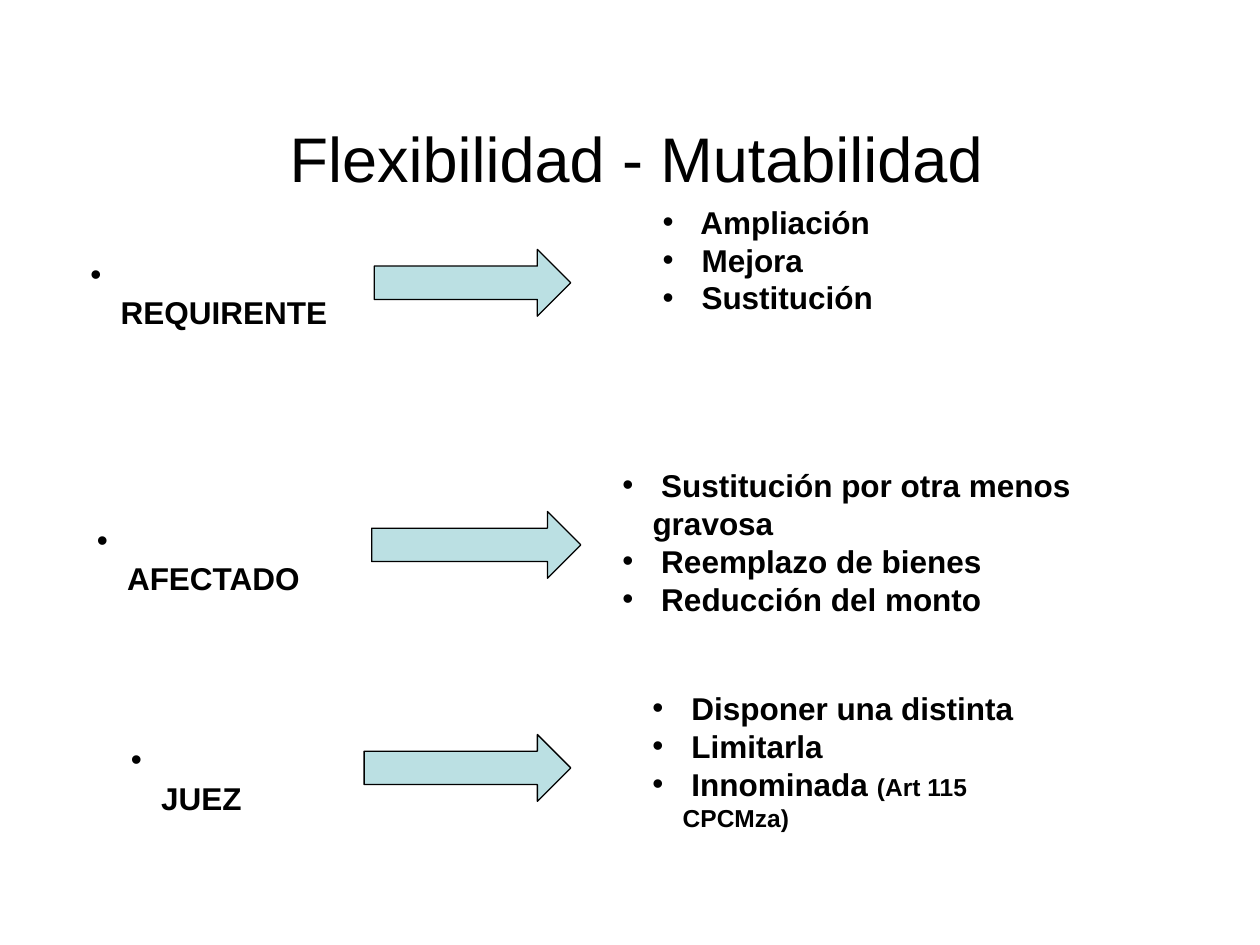
from dataclasses import dataclass

from lxml import etree
from pptx import Presentation
from pptx import util as u
from pptx.dml.color import RGBColor
from pptx.enum import shapes, text
from pptx.oxml import ns


@dataclass(frozen=True)
class Theme:
    font: str = "Arial"
    ink: RGBColor = RGBColor(0, 0, 0)
    fill: RGBColor = RGBColor(0xBB, 0xE0, 0xE3)
    head: int = 36
    body: int = 18
    note: int = 14
    line: float = 0.75
    hang: float = 0.24


THEME = Theme()
WIDE, HIGH = u.Inches(10), u.Inches(7.5)
COLS, ROWS = 100, 75  # ten grid cells to the inch

# Each row: label and its box, arrow box, list and its box (column, row, columns, rows)
PARTS = [
    ("REQUIRENTE", (6.2, 19.8, 21.3, 4), (29.7, 19.8, 15.6, 5.3),
     [[" Ampliación"], [" Mejora"], [" Sustitución"]],
     (51.6, 15.6, 18.9, 10.1)),
    ("AFECTADO", (6.7, 40.9, 18.6, 4), (29.5, 40.6, 16.6, 5.3),
     [[" Sustitución por otra menos gravosa"], [" Reemplazo de bienes"],
      [" Reducción del monto"]],
     (48.4, 36.5, 46.8, 10.1)),
    ("JUEZ", (9.4, 58.3, 11.4, 4), (28.9, 58.3, 16.4, 5.3),
     [[" Disponer una distinta"], [" Limitarla"],
      [" Innominada ", "(Art 115 CPCMza)"]],
     (50.8, 54.2, 34.7, 10.1)),
]


def place(box):
    """Turn grid cells into slide lengths."""
    x, y, w, h = box
    return (int(WIDE * x / COLS), int(HIGH * y / ROWS),
            int(WIDE * w / COLS), int(HIGH * h / ROWS))


def frame(slide, box):
    body = slide.shapes.add_textbox(*place(box)).text_frame
    body.word_wrap = True
    return body


def style(para, size, bold=False):
    font = para.font
    font.name, font.size, font.bold = THEME.font, u.Pt(size), bold
    font.color.rgb = THEME.ink


def bullet(para):
    props = para._p.get_or_add_pPr()
    hang = u.Inches(THEME.hang)
    props.set("marL", str(hang))
    props.set("indent", str(-hang))
    etree.SubElement(props, ns.qn("a:buFont"), typeface=THEME.font)
    etree.SubElement(props, ns.qn("a:buChar"), char="•")
    style(para, THEME.body, True)


def title(slide, box, words):
    body = frame(slide, box)
    body.vertical_anchor = text.MSO_ANCHOR.MIDDLE
    para = body.paragraphs[0]
    para.text = words
    para.alignment = text.PP_ALIGN.CENTER
    style(para, THEME.head)


def label(slide, box, word):
    """Bullet on the first line, its word on the second."""
    para = frame(slide, box).paragraphs[0]
    bullet(para)
    para.add_line_break()
    para.add_run().text = word


def arrow(slide, box):
    shape = slide.shapes.add_shape(shapes.MSO_SHAPE.RIGHT_ARROW, *place(box))
    shape.shadow.inherit = False
    shape.fill.solid()
    shape.fill.fore_color.rgb = THEME.fill
    shape.line.color.rgb = THEME.ink
    shape.line.width = u.Pt(THEME.line)


def items(slide, box, lines):
    """Bulleted list; a second part of a line is a smaller note."""
    body = frame(slide, box)
    for i, (main, *notes) in enumerate(lines):
        para = body.add_paragraph() if i else body.paragraphs[0]
        bullet(para)
        para.add_run().text = main
        for note in notes:
            run = para.add_run()
            run.text = note
            run.font.size = u.Pt(THEME.note)


def main():
    deck = Presentation()
    deck.slide_width, deck.slide_height = WIDE, HIGH
    slide = deck.slides.add_slide(deck.slide_layouts[6])

    # Heading
    title(slide, (5.5, 6.2, 90, 12.5), "Flexibilidad - Mutabilidad")

    # One row for each party: label, arrow, list
    for word, left, mid, lines, right in PARTS:
        label(slide, left, word)
        arrow(slide, mid)
        items(slide, right, lines)

    deck.save("out.pptx")


if __name__ == "__main__":
    main()
